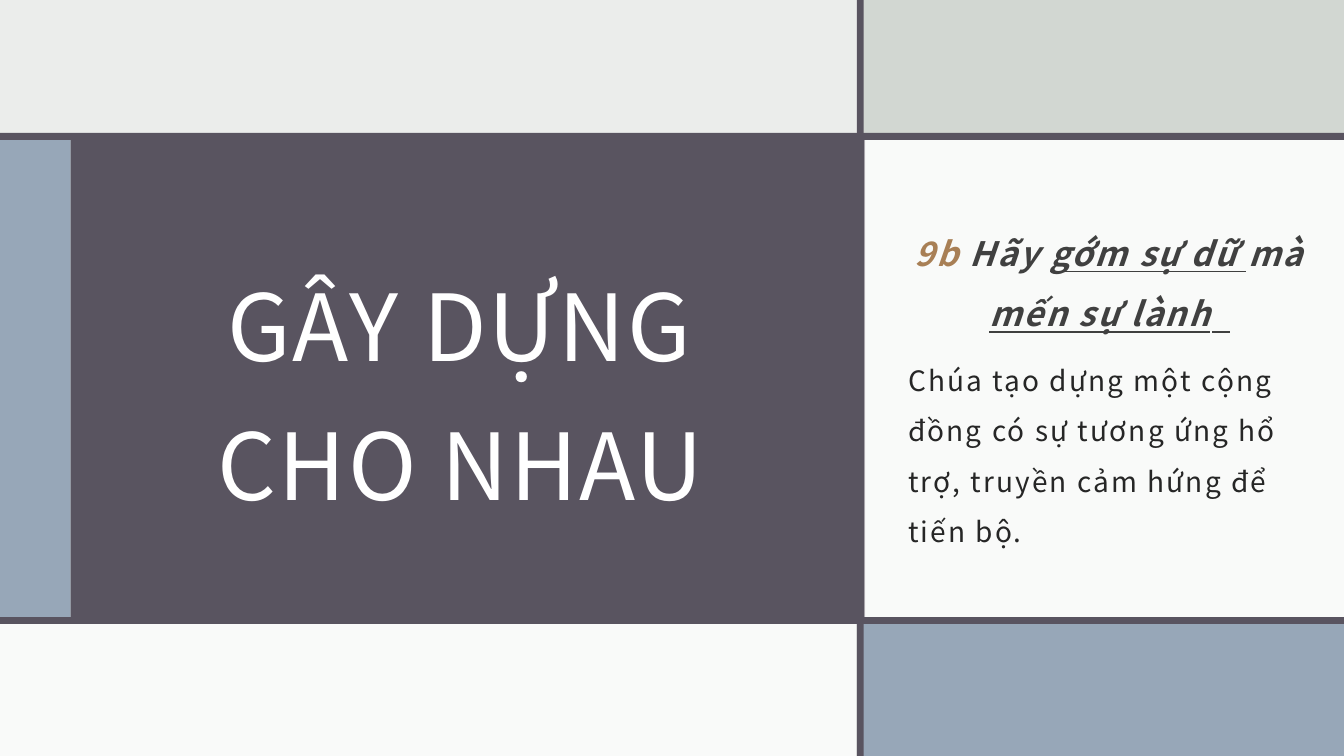
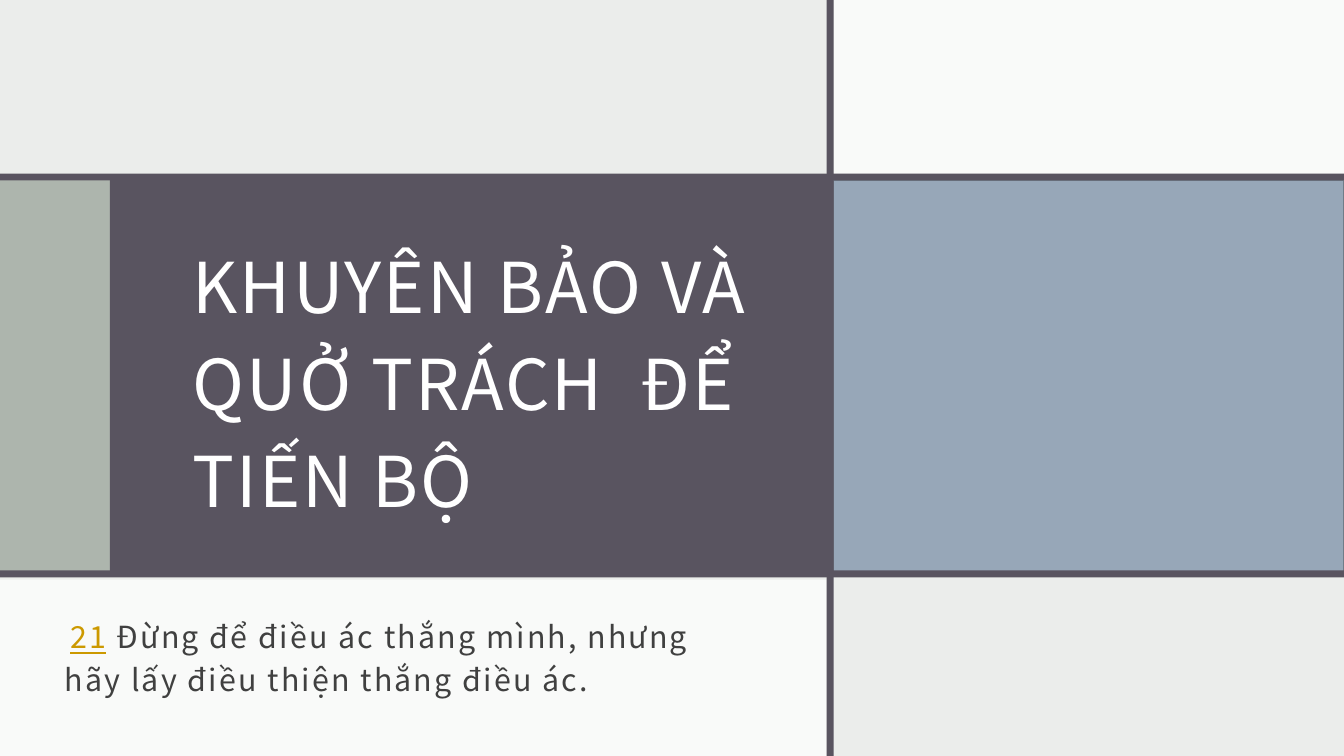
"""Two slides of crossing bands with a title panel and a verse."""
from pptx import Presentation
from pptx.dml.color import RGBColor
from pptx.enum.shapes import MSO_SHAPE
from pptx.enum.text import MSO_ANCHOR, MSO_AUTO_SIZE, PP_ALIGN
from pptx.oxml.ns import qn
from pptx.util import Pt
from lxml import etree

RECTANGLE = MSO_SHAPE.RECTANGLE
MIDDLE, TOP = MSO_ANCHOR.MIDDLE, MSO_ANCHOR.TOP
LEFT, CENTER = PP_ALIGN.LEFT, PP_ALIGN.CENTER
NO_AUTOFIT = MSO_AUTO_SIZE.NONE

WIDTH, HEIGHT, BAND = 960, 540, 5
FONT = "Noto Sans CJK JP"
BACKGROUND, PLUM, BLUE, SAGE, MINT = "EBEDEB", "595460", "97A7B8", "ADB5AD", "D2D7D2"
WHITE, INK, BLACK, BRONZE, GOLD, EDGE = "FFFFFF", "404040", "262626", "A87F55", "CC9900", "707C88"
VEIL_ALPHA = "75000"
FRAME = {
    "margin_left": Pt(8.64), "margin_top": Pt(8.64), "margin_right": Pt(8.64),
    "margin_bottom": Pt(7.2), "word_wrap": True, "auto_size": NO_AUTOFIT,
}

HEADING = {"size": Pt(24), "bold": True, "italic": True}
UNDERLINED = {**HEADING, "underline": True}

SLIDES = [
    {
        "panels": [
            (614, 0, 346, 96, MINT), (0, 99, 50.5, 343.5, BLUE),
            (50.5, 97, 567.5, 347, PLUM), (0, 441.5, 611.5, 98.5, WHITE),
            (617.5, 96.5, 342.5, 348.5, WHITE), (614, 443.5, 346, 96.5, BLUE),
        ],
        "column": 612, "rows": (95, 440.75),
        "title": {
            "box": (90, 121, 478, 299.5), "anchor": MIDDLE, "spacing": 1.25, "before": 0,
            "paragraphs": [(CENTER, [("GÂY DỰNG CHO NHAU", WHITE, {"size": Pt(66)})])],
        },
        "verse": {
            "box": (640, 152, 305, 238), "anchor": MIDDLE, "spacing": 1.5, "before": 9.3,
            "paragraphs": [
                (CENTER, [
                    ("9b ", BRONZE, HEADING), ("Hãy ", INK, HEADING),
                    ("gớm sự dữ ", INK, UNDERLINED), ("mà ", INK, HEADING),
                    ("mến sự lành", INK, UNDERLINED),
                    ("  ", INK, {**UNDERLINED, "italic": False}),
                ]),
                (LEFT, [("Chúa tạo dựng một cộng đồng có sự tương ứng hổ trợ, "
                         "truyền cảm hứng để tiến bộ.", BLACK, {"size": Pt(20)})]),
            ],
        },
    },
    {
        "panels": [
            (595.5, 0, 364.5, 124, WHITE), (0, 127.5, 78.5, 281.5, SAGE),
            (78.5, 127.5, 515.5, 281.5, PLUM), (595.5, 129, 364.5, 279.5, BLUE, EDGE),
            (0, 414, 590.5, 126, WHITE),
        ],
        "column": 590.5, "rows": (124, 407.5),
        "title": {
            "box": (129, 152.5, 434, 231), "anchor": MIDDLE, "spacing": 1.15, "before": 0,
            "paragraphs": [(LEFT, [("KHUYÊN BẢO VÀ QUỞ TRÁCH  ĐỂ TIẾN BỘ", WHITE, {"size": Pt(50)})])],
        },
        "verse": {
            "box": (37.5, 427.5, 503, 95), "anchor": TOP, "spacing": 1.2, "before": 9.3,
            "paragraphs": [(LEFT, [
                (" ", INK, {"size": Pt(10.8)}),
                ("21", GOLD, {"size": Pt(21.7), "underline": True}),
                (" Đừng để điều ác thắng mình, nhưng hãy lấy điều thiện thắng điều ác.",
                 INK, {"size": Pt(21.7)}),
            ])],
        },
    },
]


def paint(color_format, color):
    color_format.rgb = RGBColor.from_string(color)


def write(shape, content):
    shape.left, shape.top, shape.width, shape.height = map(Pt, content["box"])
    frame = shape.text_frame
    for key, value in FRAME.items():
        setattr(frame, key, value)
    frame.vertical_anchor = content["anchor"]
    for index, (alignment, runs) in enumerate(content["paragraphs"]):
        paragraph = frame.add_paragraph() if index else frame.paragraphs[0]
        paragraph.alignment = alignment
        paragraph.line_spacing = content["spacing"]
        paragraph.space_before = Pt(content["before"])
        for text, color, style in runs:
            run = paragraph.add_run()
            run.text = text
            for key, value in {"name": FONT, **style}.items():
                setattr(run.font, key, value)
            paint(run.font.color, color)
            properties = run.font._element
            properties.set("spc", "150")
            latin = properties.find(qn("a:latin"))
            east_asian = etree.Element(qn("a:ea"), typeface=FONT)
            latin.addnext(east_asian)


deck = Presentation()
deck.slide_width, deck.slide_height = Pt(WIDTH), Pt(HEIGHT)

for content in SLIDES:
    slide = deck.slides.add_slide(deck.slide_layouts[5])
    slide.background.fill.solid()
    paint(slide.background.fill.fore_color, BACKGROUND)

    bands = [(content["column"], 0, BAND, HEIGHT, PLUM)]
    bands += [(0, row, WIDTH, BAND, PLUM) for row in content["rows"]]
    for left, top, width, height, color, *edge in content["panels"] + bands:
        panel = slide.shapes.add_shape(RECTANGLE, Pt(left), Pt(top), Pt(width), Pt(height))
        panel.shadow.inherit = False
        panel.fill.solid()
        paint(panel.fill.fore_color, color)
        if color == WHITE:
            tint = panel._element.spPr.find(qn("a:solidFill"))[0]
            etree.SubElement(tint, qn("a:alpha"), val=VEIL_ALPHA)
        if edge:
            paint(panel.line.color, edge[0])
            panel.line.width = Pt(1)
        else:
            panel.line.fill.background()

    title = slide.shapes.title
    slide.shapes._spTree.append(title._element)
    write(title, content["title"])
    write(slide.shapes.add_textbox(0, 0, 0, 0), content["verse"])

deck.save("out.pptx")
